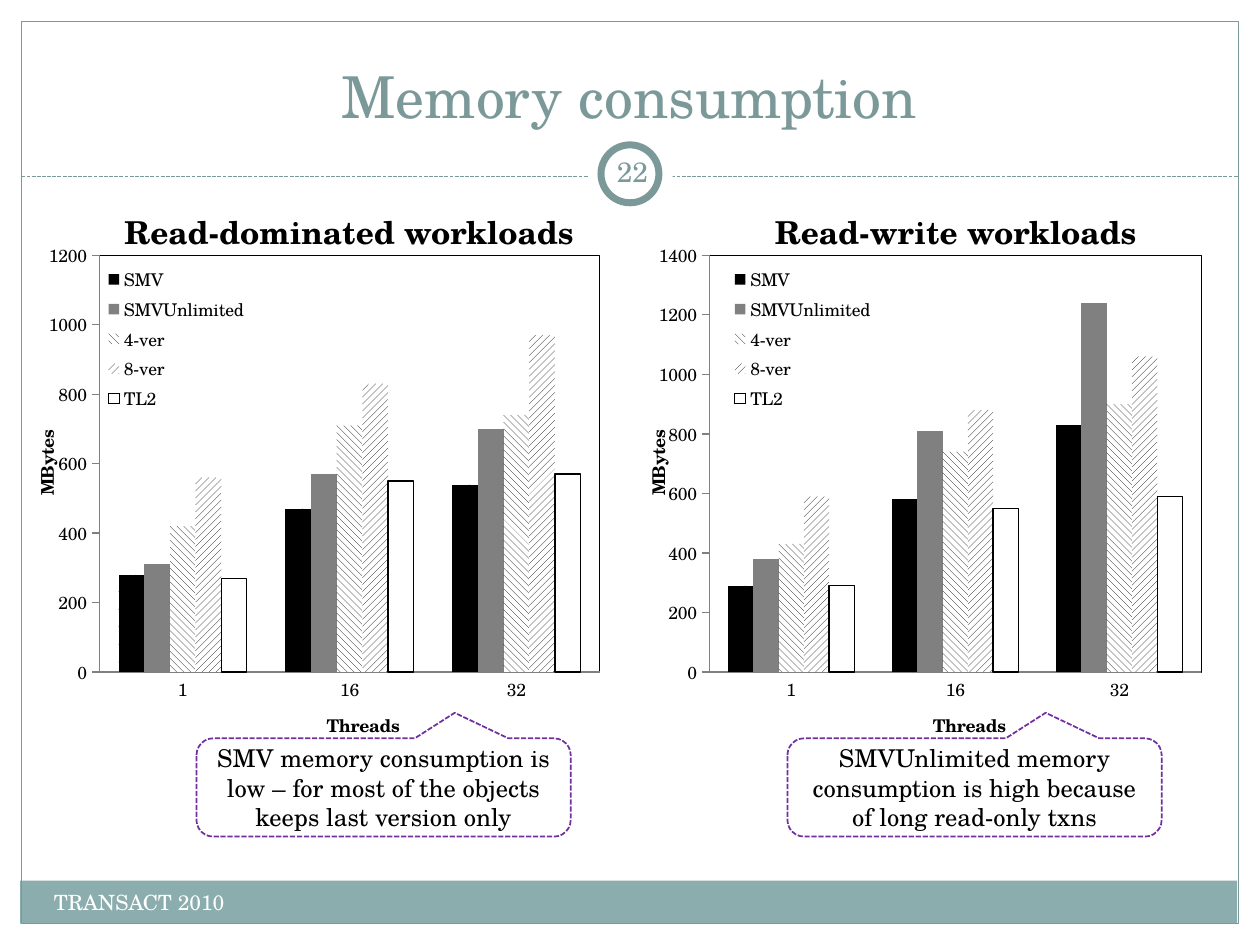
from lxml import etree
from pptx import Presentation
from pptx.chart.data import CategoryChartData
from pptx.dml.color import RGBColor
from pptx.enum.chart import XL_CHART_TYPE as ChartType, XL_LEGEND_POSITION as LegendSide
from pptx.enum.chart import XL_TICK_MARK as Tick
from pptx.enum.dml import MSO_LINE as Dash, MSO_PATTERN as Pattern
from pptx.enum.shapes import MSO_CONNECTOR as Connector, MSO_SHAPE as Shape
from pptx.enum.text import MSO_ANCHOR as Anchor, PP_ALIGN as Align
from pptx.oxml import parse_xml
from pptx.oxml.ns import nsdecls, qn
from pptx.util import Inches, Pt

FONT = "TeX Gyre Schola"
HEX = {"white": "FFFFFF", "black": "000000", "gray": "808080",
       "teal": "7C999A", "band": "8CADAE", "purple": "7030A0"}
COLORS = {name: RGBColor.from_string(value) for name, value in HEX.items()}


def write(box, text, size, color, align=Align.CENTER, anchor=Anchor.TOP, bold=False):
    frame = box.text_frame
    frame.word_wrap = True
    frame.vertical_anchor = anchor
    para = frame.paragraphs[0]
    para.alignment = align
    span = para.add_run()
    span.text = text
    for name, value in {"name": FONT, "size": Pt(size), "bold": bold}.items():
        setattr(span.font, name, value)
    span.font.color.rgb = COLORS[color]


def place(element, index, layout):
    """Give a chart part a manual layout; values are fractions of the chart."""
    for old in element.findall(qn("c:layout")):
        element.remove(old)
    target = '<c:layoutTarget val="inner"/>' if element.tag == qn("c:plotArea") else ""
    modes = '<c:xMode val="edge"/><c:yMode val="edge"/>'
    sizes = "".join(f'<c:{key} val="{value}"/>' for key, value in zip("xywh", layout))
    element.insert(index, parse_xml(
        f'<c:layout {nsdecls("c")}><c:manualLayout>{target}{modes}{sizes}'
        '</c:manualLayout></c:layout>'))


deck = Presentation()
deck.slide_width, deck.slide_height = Inches(10), Inches(7.5)
page = deck.slides.add_slide(deck.slide_layouts[6])

# Divider below the title; the badge covers its middle
divider = page.shapes.add_connector(
    Connector.STRAIGHT, Inches(0.17), Inches(1.4), Inches(9.83), Inches(1.4))
divider.line.color.rgb = COLORS["teal"]
divider.line.width = Pt(0.75)
divider.line.dash_style = Dash.SQUARE_DOT
etree.SubElement(divider._element.spPr, qn("a:effectLst"))

# Footer band, page frame and number badge
decor = [
    (Shape.RECTANGLE, (0.16, 6.99, 9.66, 0.34), "band", None, 0),
    (Shape.RECTANGLE, (0.17, 0.17, 9.66, 7.16), None, "teal", 0.75),
    (Shape.OVAL, (4.67, 1.05, 0.67, 0.67), "white", None, 0),
    (Shape.OVAL, (4.77, 1.15, 0.46, 0.46), "white", "teal", 4),
]
for kind, bounds, fill, line, width in decor:
    shape = page.shapes.add_shape(kind, *map(Inches, bounds))
    shape.shadow.inherit = False
    if fill:
        shape.fill.solid()
        shape.fill.fore_color.rgb = COLORS[fill]
    else:
        shape.fill.background()
    if line:
        shape.line.color.rgb = COLORS[line]
        shape.line.width = Pt(width)
    else:
        shape.line.fill.background()

# Title, footer and page number
title = page.shapes.add_textbox(*map(Inches, (0.33, 0.25, 9.33, 0.83)))
write(title, "Memory consumption", 33, "teal", anchor=Anchor.BOTTOM)
footer = page.shapes.add_textbox(*map(Inches, (0.33, 7.01, 3.92, 0.4)))
write(footer, "TRANSACT 2010", 12, "white", align=Align.LEFT)
number = page.shapes.add_textbox(*map(Inches, (4.77, 1.12, 0.5, 0.48)))
for side in ("left", "top", "right", "bottom"):
    setattr(number.text_frame, f"margin_{side}", Inches(0.05))
write(number, "22", 16, "teal", anchor=Anchor.MIDDLE)

# Both workloads: chart, heading and callout
SERIES = [("SMV", Pattern.PERCENT_5, "black", "black"),
          ("SMVUnlimited", None, "gray", None),
          ("4-ver", Pattern.WIDE_DOWNWARD_DIAGONAL, "black", "white"),
          ("8-ver", Pattern.WIDE_UPWARD_DIAGONAL, "black", "white"),
          ("TL2", None, "white", None)]
WORKLOADS = [
    {"heading": "Read-dominated workloads", "heading_at": (0.78, 1.64, 3.98, 0.4),
     "chart_at": (0.23, 1.87, 4.77, 4.21), "top": 1200,
     "legend_left": 0.12, "callout_left": 1.56,
     "values": [(280, 470, 540), (310, 570, 700), (420, 710, 740),
                (560, 830, 970), (270, 550, 570)],
     "note": "SMV memory consumption is low – for most of the objects "
             "keeps last version only"},
    {"heading": "Read-write workloads", "heading_at": (5.63, 1.64, 3.91, 0.4),
     "chart_at": (5.08, 1.87, 4.69, 4.21), "top": 1400,
     "legend_left": 0.15, "callout_left": 6.25,
     "values": [(290, 580, 830), (380, 810, 1240), (430, 740, 900),
                (590, 880, 1060), (290, 550, 590)],
     "note": "SMVUnlimited memory consumption is high because "
             "of long read-only txns"},
]
for load in WORKLOADS:
    data = CategoryChartData()
    data.categories = ["1", "16", "32"]
    for (name, *_), values in zip(SERIES, load["values"]):
        data.add_series(name, values)
    chart = page.shapes.add_chart(
        ChartType.COLUMN_CLUSTERED, *map(Inches, load["chart_at"]), data).chart
    chart.has_title = False
    chart.font.name, chart.font.size = FONT, Pt(10)
    chart.font.color.rgb = COLORS["black"]

    # Bars
    bars = chart.plots[0]
    bars.gap_width, bars.overlap, bars.vary_by_categories = 150, 0, False
    for series, (name, pattern, front, back) in zip(bars.series, SERIES):
        fill = series.format.fill
        if pattern is None:
            fill.solid()
        else:
            fill.patterned()
            fill.pattern = pattern
            fill.back_color.rgb = COLORS[back]
        fill.fore_color.rgb = COLORS[front]
        if name == "TL2":
            series.format.line.color.rgb = COLORS["black"]
            series.format.line.width = Pt(0.75)

    # Axes, with titles clear of the tick labels and the callout
    scale = chart.value_axis
    scale.minimum_scale, scale.maximum_scale, scale.major_unit = 0, load["top"], 200
    for axis, label, tick, spot, turn in (
            (chart.category_axis, "Threads", Tick.NONE, (0.49, 0.89), 0),
            (scale, "MBytes", Tick.OUTSIDE, (0, 0.36), -90)):
        axis.has_major_gridlines = False
        axis.major_tick_mark = tick
        axis.format.line.color.rgb = COLORS["gray"]
        frame = axis.axis_title.text_frame
        frame._txBody.bodyPr.set("rot", str(turn * 60000))
        span = frame.paragraphs[0].add_run()
        span.text = label
        for name, value in {"name": FONT, "size": Pt(10), "bold": True}.items():
            setattr(span.font, name, value)
        span.font.color.rgb = COLORS["black"]
        place(axis.axis_title._element, 1, spot)

    # Legend in one column, and framed plot area
    chart.has_legend = True
    chart.legend.position = LegendSide.RIGHT
    chart.legend.include_in_layout = False
    place(chart.legend._element, 1, (load["legend_left"], 0.05, 0.25, 0.29))
    area = chart._chartSpace.find(".//" + qn("c:plotArea"))
    place(area, 0, (0.117, 0.037, 0.833, 0.786))
    area.append(parse_xml(
        f'<c:spPr {nsdecls("c", "a")}><a:noFill/><a:ln w="9525"><a:solidFill>'
        f'<a:srgbClr val="{HEX["black"]}"/></a:solidFill></a:ln></c:spPr>'))

    # Heading and callout
    heading = page.shapes.add_textbox(*map(Inches, load["heading_at"]))
    write(heading, load["heading"], 18, "black", bold=True)
    callout = page.shapes.add_shape(
        Shape.ROUNDED_RECTANGULAR_CALLOUT,
        *map(Inches, (load["callout_left"], 5.86, 2.97, 0.78)))
    for index, value in enumerate((0.19, -0.76, 0.17)):
        callout.adjustments[index] = value
    callout.shadow.inherit = False
    callout.fill.solid()
    callout.fill.fore_color.rgb = COLORS["white"]
    callout.line.color.rgb = COLORS["purple"]
    callout.line.width = Pt(1)
    callout.line.dash_style = Dash.SQUARE_DOT
    write(callout, load["note"], 14, "black", anchor=Anchor.MIDDLE)

deck.save("out.pptx")
